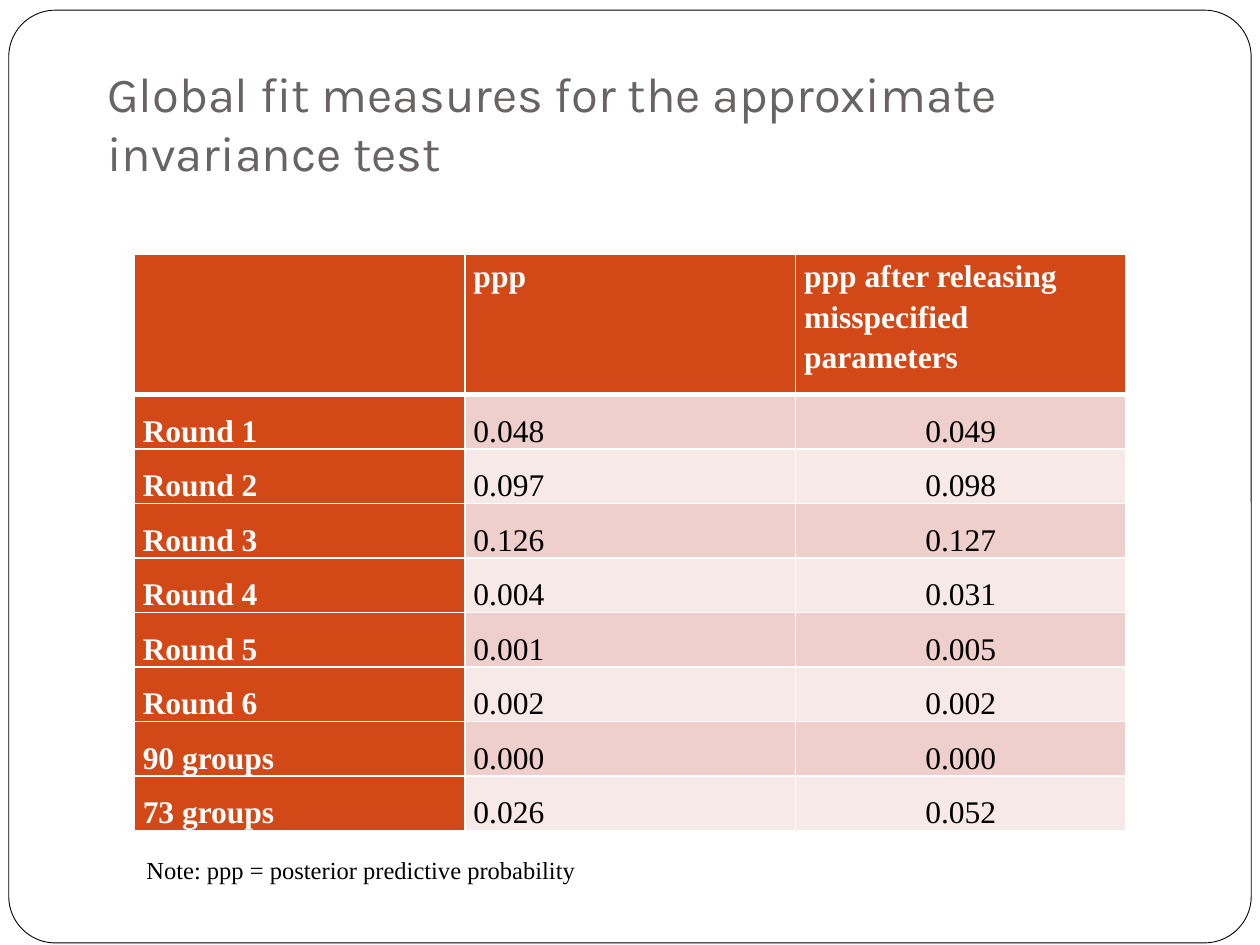
"""Build the slide with global fit measures for the approximate invariance test."""
from dataclasses import dataclass
from typing import NamedTuple

from lxml.etree import SubElement
from pptx import Presentation
from pptx.dml.color import RGBColor
from pptx.enum.shapes import MSO_SHAPE
from pptx.enum.text import MSO_ANCHOR as Anchor, MSO_AUTO_SIZE as AutoSize, PP_ALIGN as Align
from pptx.oxml.ns import qn
from pptx.util import Pt


@dataclass(frozen=True)
class Theme:
    title_font: str = "Karla"
    body_font: str = "Times New Roman"
    title_size: float = 28
    table_size: float = 18
    note_size: float = 14
    title_color: str = "696464"
    accent: str = "D34817"
    bands: tuple[str, str] = ("EFCFCC", "F7E9E8")
    white: str = "FFFFFF"
    black: str = "000000"
    thin: float = 1
    thick: float = 3


class Box(NamedTuple):
    left: float
    top: float
    width: float
    height: float

    def lengths(self) -> tuple:
        return tuple(Pt(value) for value in self)


class FitRow(NamedTuple):
    label: str
    ppp: str
    released: str


THEME = Theme()
FRAME_BOX = Box(5, 5.8, 710, 533)
TITLE_BOX = Box(54, 21, 612, 90)
TABLE_BOX = Box(76.6, 145.5, 567, 329)
NOTE_BOX = Box(76.6, 485.3, 278.6, 24.5)
HEADER_HEIGHT = 80
ROWS = [
    FitRow("", "ppp", "ppp after releasing misspecified parameters"),
    FitRow("Round 1", "0.048", "0.049"),
    FitRow("Round 2", "0.097", "0.098"),
    FitRow("Round 3", "0.126", "0.127"),
    FitRow("Round 4", "0.004", "0.031"),
    FitRow("Round 5", "0.001", "0.005"),
    FitRow("Round 6", "0.002", "0.002"),
    FitRow("90 groups", "0.000", "0.000"),
    FitRow("73 groups", "0.026", "0.052"),
]


def style_runs(paragraph, font: str, size: float, color: str, bold: bool = False) -> None:
    for run in paragraph.runs:
        run.font.name = font
        run.font.size = Pt(size)
        run.font.bold = bold
        run.font.color.rgb = RGBColor.from_string(color)


def place(shape, box: Box) -> None:
    shape.left, shape.top, shape.width, shape.height = box.lengths()


def add_title(slide, text: str) -> None:
    title = slide.shapes.title
    place(title, TITLE_BOX)
    frame = title.text_frame
    frame.text = text
    frame.word_wrap = True
    frame.auto_size = AutoSize.NONE
    frame.vertical_anchor = Anchor.BOTTOM
    frame.margin_bottom = Pt(7.2)
    frame.paragraphs[0].alignment = Align.LEFT
    style_runs(frame.paragraphs[0], THEME.title_font, THEME.title_size, THEME.title_color)


def add_frame(slide) -> None:
    frame = slide.shapes.add_shape(MSO_SHAPE.ROUNDED_RECTANGLE, *FRAME_BOX.lengths())
    frame.adjustments[0] = 0.05
    frame.shadow.inherit = False
    frame.fill.solid()
    frame.fill.fore_color.rgb = RGBColor.from_string(THEME.white)
    frame.line.color.rgb = RGBColor.from_string(THEME.black)
    frame.line.width = Pt(0.5)
    slide.shapes.title.element.addprevious(frame.element)


def set_borders(cell, top: float, bottom: float) -> None:
    properties = cell._tc.get_or_add_tcPr()
    widths = {"a:lnL": THEME.thin, "a:lnR": THEME.thin, "a:lnT": top, "a:lnB": bottom}
    for tag, width in widths.items():
        line = SubElement(properties, qn(tag), w=str(Pt(width)))
        fill = SubElement(line, qn("a:solidFill"))
        SubElement(fill, qn("a:srgbClr"), val=THEME.white)


def format_cell(cell, text: str, row: int, column: int) -> None:
    heading = row == 0 or column == 0
    set_borders(
        cell,
        top=THEME.thick if row == 1 else THEME.thin,
        bottom=THEME.thick if row == 0 else THEME.thin,
    )
    cell.fill.solid()
    color = THEME.accent if heading else THEME.bands[(row - 1) % 2]
    cell.fill.fore_color.rgb = RGBColor.from_string(color)
    cell.margin_left = cell.margin_right = Pt(5)
    cell.margin_top = cell.margin_bottom = Pt(0)
    cell.vertical_anchor = Anchor.BOTTOM if row else Anchor.TOP
    cell.text_frame.text = text
    paragraph = cell.text_frame.paragraphs[0]
    paragraph.line_spacing = 1.15
    paragraph.alignment = Align.CENTER if row and column == 2 else Align.LEFT
    text_color = THEME.white if heading else THEME.black
    style_runs(paragraph, THEME.body_font, THEME.table_size, text_color, heading)


def add_fit_table(slide, rows: list[FitRow]) -> None:
    column_count = len(rows[0])
    table = slide.shapes.add_table(len(rows), column_count, *TABLE_BOX.lengths()).table
    table.first_col = True
    for column in table.columns:
        column.width = Pt(TABLE_BOX.width / column_count)
    body_height = (TABLE_BOX.height - HEADER_HEIGHT) / (len(rows) - 1)
    for row, values in enumerate(rows):
        table.rows[row].height = Pt(body_height if row else HEADER_HEIGHT)
        for column, text in enumerate(values):
            format_cell(table.cell(row, column), text, row, column)


def add_note(slide, text: str) -> None:
    frame = slide.shapes.add_textbox(*NOTE_BOX.lengths()).text_frame
    frame.text = text
    frame.word_wrap = False
    frame.auto_size = AutoSize.SHAPE_TO_FIT_TEXT
    style_runs(frame.paragraphs[0], THEME.body_font, THEME.note_size, THEME.black)


def main() -> None:
    presentation = Presentation()
    presentation.slide_width, presentation.slide_height = Pt(720), Pt(540)
    slide = presentation.slides.add_slide(presentation.slide_layouts[5])
    add_title(slide, "Global fit measures for the approximate invariance test")
    add_frame(slide)
    add_fit_table(slide, ROWS)
    add_note(slide, "Note: ppp = posterior predictive probability")
    presentation.save("out.pptx")


if __name__ == "__main__":
    main()
